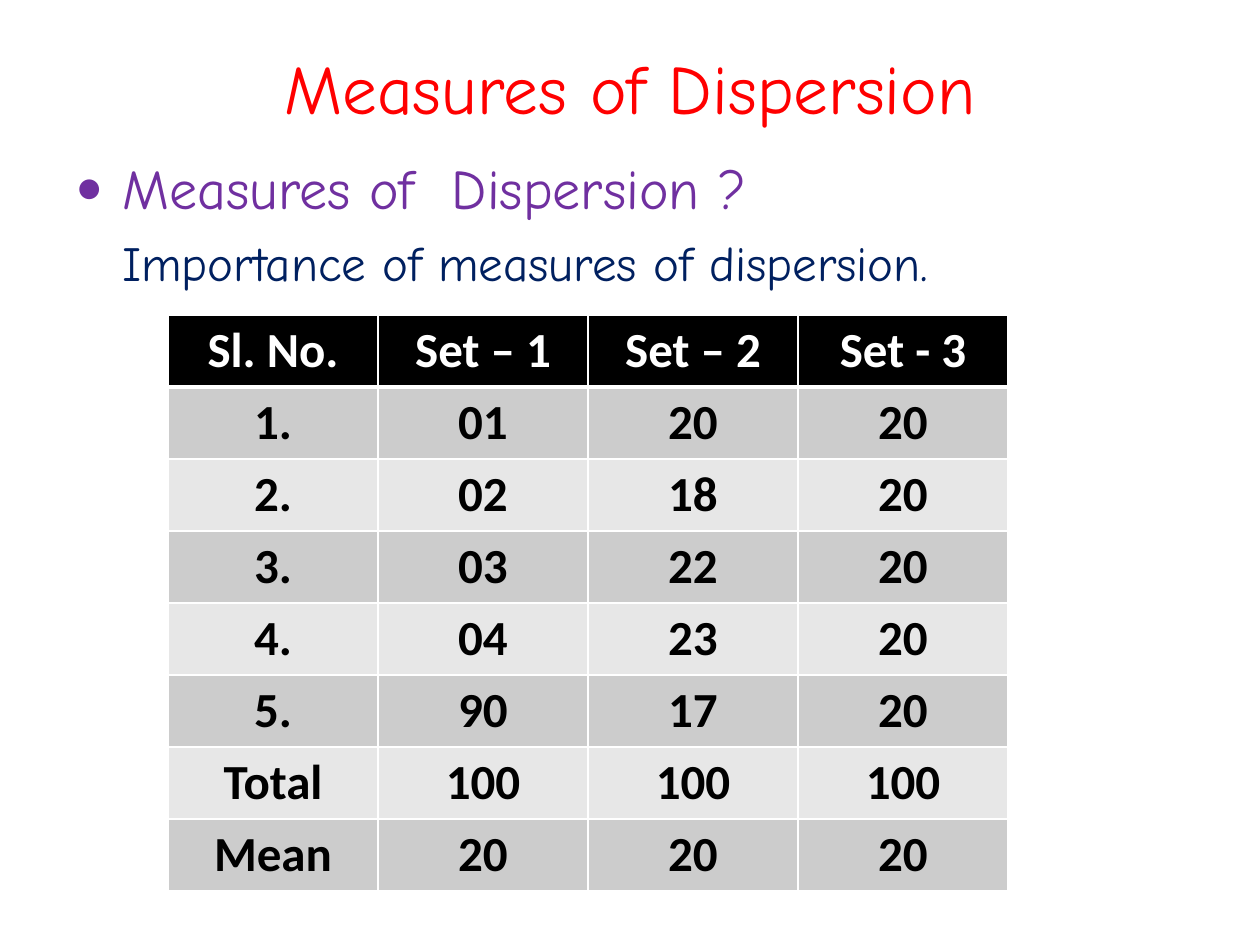
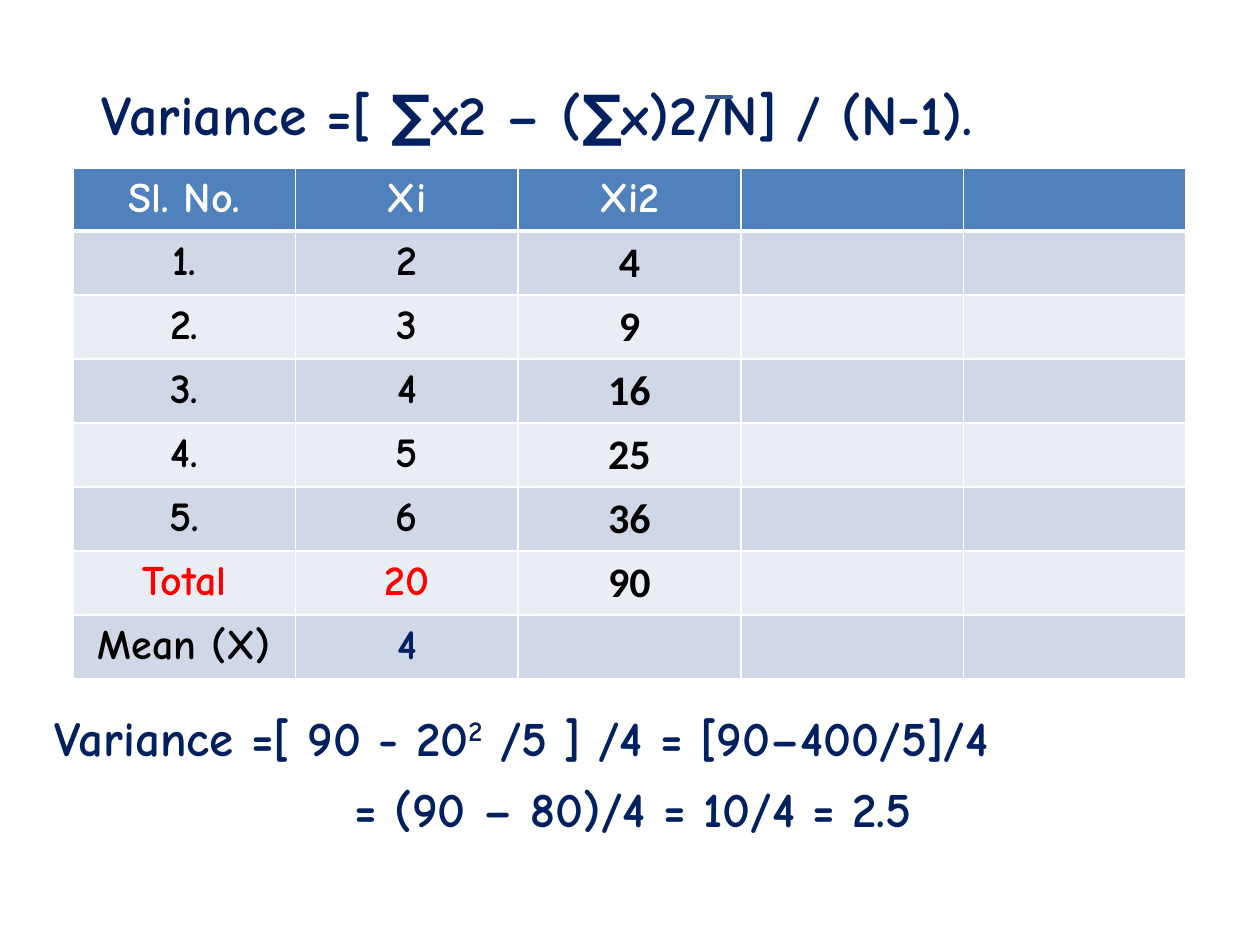
from lxml import etree
from pptx import Presentation, util as u
from pptx.dml.color import RGBColor
from pptx.enum import shapes, text
from pptx.oxml import ns

# Scale, fonts and colours
PX = 914400 / 126
HAND, PLAIN = "Comic Neue", "Calibri"
WHITE = RGBColor(0xFF, 0xFF, 0xFF)
BLACK = RGBColor(0x00, 0x00, 0x00)
RED = RGBColor(0xFF, 0x00, 0x00)
PURPLE = RGBColor(0x70, 0x30, 0xA0)
NAVY = RGBColor(0x00, 0x20, 0x60)
BLUE = RGBColor(0x4F, 0x81, 0xBD)
DARK_BLUE = RGBColor(0x3A, 0x5F, 0x8C)
GREY_BANDS = (RGBColor(0xCC, 0xCC, 0xCC), RGBColor(0xE7, 0xE7, 0xE7))
BLUE_BANDS = (RGBColor(0xD0, 0xD8, 0xE8), RGBColor(0xE9, 0xED, 0xF4))
HANGING = 47  # px from the bullet to its text


def px(length):
    return u.Emu(round(length * PX))


def add_text(paragraph, words, size=28, font=HAND, color=NAVY, bold=False, raised=False):
    run = paragraph.add_run()
    run.text = words
    run.font.size = u.Pt(size)
    run.font.name = font
    run.font.color.rgb = color
    run.font.bold = bold
    if raised:
        run._r.get_or_add_rPr().set("baseline", "30000")


def set_indent(paragraph, left, bullet=None):
    properties = paragraph._p.get_or_add_pPr()
    properties.set("marL", str(px(left)))
    properties.set("indent", str(px(-left if bullet else 0)))
    if bullet:
        etree.SubElement(properties, ns.qn("a:buFont"), typeface=PLAIN)
        etree.SubElement(properties, ns.qn("a:buChar"), char=bullet)


def set_border(cell, side, points):
    properties = cell._tc.get_or_add_tcPr()
    line = etree.SubElement(properties, ns.qn(f"a:ln{side}"), w=str(u.Pt(points)))
    fill = etree.SubElement(line, ns.qn("a:solidFill"))
    etree.SubElement(fill, ns.qn("a:srgbClr"), val=str(WHITE))


class Deck:
    """Holds the presentation and the slide being built."""

    def __init__(self):
        self.prs = Presentation()
        self.prs.slide_width, self.prs.slide_height = u.Inches(10), u.Inches(7.5)
        self.slide = None

    def new_slide(self):
        self.slide = self.prs.slides.add_slide(self.prs.slide_layouts[6])

    def box(self, left, top, width, height, anchor=text.MSO_ANCHOR.TOP):
        frame = self.slide.shapes.add_textbox(*map(px, (left, top, width, height))).text_frame
        frame.word_wrap = True
        frame.vertical_anchor = anchor
        return frame

    def title(self, words):
        heading = self.box(63, 38, 1134, 98, text.MSO_ANCHOR.MIDDLE).paragraphs[0]
        heading.alignment = text.PP_ALIGN.CENTER
        add_text(heading, words, size=39.6, color=RED)

    def minus(self, left, top, width, height):
        bar = self.slide.shapes.add_shape(
            shapes.MSO_SHAPE.MATH_MINUS, *map(px, (left, top, width, height)))
        bar.shadow.inherit = False
        bar.fill.solid()
        bar.fill.fore_color.rgb = BLUE
        bar.line.color.rgb = DARK_BLUE
        bar.line.width = u.Pt(2)

    def table(self, left, top, width, row_heights, rows, header_fill, bands, cell_format):
        """cell_format(row, column) gives the text format of one cell."""
        columns = len(rows[0])
        table = self.slide.shapes.add_table(
            len(rows), columns, *map(px, (left, top, width, sum(row_heights)))).table
        table.horz_banding = False
        for column in table.columns:
            column.width = px(width / columns)
        for r, (height, values) in enumerate(zip(row_heights, rows)):
            table.rows[r].height = px(height)
            for c, value in enumerate(values):
                cell = table.cell(r, c)
                for side in "LRTB":
                    under_header = (r, side) in ((0, "B"), (1, "T"))
                    set_border(cell, side, 3 if under_header else 1)
                cell.fill.solid()
                cell.fill.fore_color.rgb = bands[(r - 1) % 2] if r else header_fill
                if value:
                    paragraph = cell.text_frame.paragraphs[0]
                    paragraph.alignment = text.PP_ALIGN.CENTER
                    add_text(paragraph, value, bold=True, **cell_format(r, c))


def dispersion_slide(deck):
    deck.new_slide()
    deck.title("Measures of Dispersion")

    # Question and its importance
    body = deck.box(63, 147, 1134, 160)
    question = body.paragraphs[0]
    set_indent(question, HANGING, bullet="•")
    add_text(question, "Measures of  Dispersion ?", size=32, color=PURPLE)
    importance = body.add_paragraph()
    set_indent(importance, HANGING)
    importance.space_before = u.Pt(7)
    add_text(importance, "Importance of measures of dispersion.")

    # Three sets with the same mean
    sets = [
        ("Sl. No.", "Set – 1", "Set – 2", "Set - 3"),
        ("1.", "01", "20", "20"),
        ("2.", "02", "18", "20"),
        ("3.", "03", "22", "20"),
        ("4.", "04", "23", "20"),
        ("5.", "90", "17", "20"),
        ("Total", "100", "100", "100"),
        ("Mean", "20", "20", "20"),
    ]
    deck.table(168, 315, 840, [72] * len(sets), sets, BLACK, GREY_BANDS,
               lambda r, c: {"font": PLAIN, "color": BLACK if r else WHITE})


def variance_slide(deck):
    deck.new_slide()

    # Formula
    formula = deck.box(42, 73, 1155, 85).paragraphs[0]
    set_indent(formula, HANGING)
    add_text(formula, "Variance =[ ∑x2 – (∑x)2/N] / (N-1).", size=32, bold=True)
    deck.minus(703, 94, 32, 6)

    # Worked values
    values = [
        ("Sl. No.", "Xi", "Xi2", "", ""),
        ("1.", "2", "4", "", ""),
        ("2.", "3", "9", "", ""),
        ("3.", "4", "16", "", ""),
        ("4.", "5", "25", "", ""),
        ("5.", "6", "36", "", ""),
        ("Total", "20", "90", "", ""),
        ("Mean (X)", "4", "", "", ""),
    ]
    total, mean = 6, 7

    def value_format(r, c):
        color = BLACK if r else WHITE
        if r == total and c < 2:
            color = RED
        elif (r, c) == (mean, 1):
            color = NAVY
        return {"size": 24, "font": PLAIN if r and c == 2 else HAND, "color": color}

    deck.table(73, 168, 1113, [60] + [64] * 7, values, BLUE, BLUE_BANDS, value_format)

    # Result
    result = deck.box(42, 701, 1155, 150)
    substitution = result.paragraphs[0]
    add_text(substitution, "Variance =[ 90 - 20", bold=True)
    add_text(substitution, "2", bold=True, raised=True)
    add_text(substitution, " /5 ] /4 = [90–400/5]/4", bold=True)
    answer = result.add_paragraph()
    set_indent(answer, 300)
    answer.space_before = u.Pt(7)
    add_text(answer, "= (90 – 80)/4 = 10/4 = 2.5", bold=True)


def main():
    deck = Deck()
    dispersion_slide(deck)
    variance_slide(deck)
    deck.prs.save("out.pptx")


if __name__ == "__main__":
    main()
